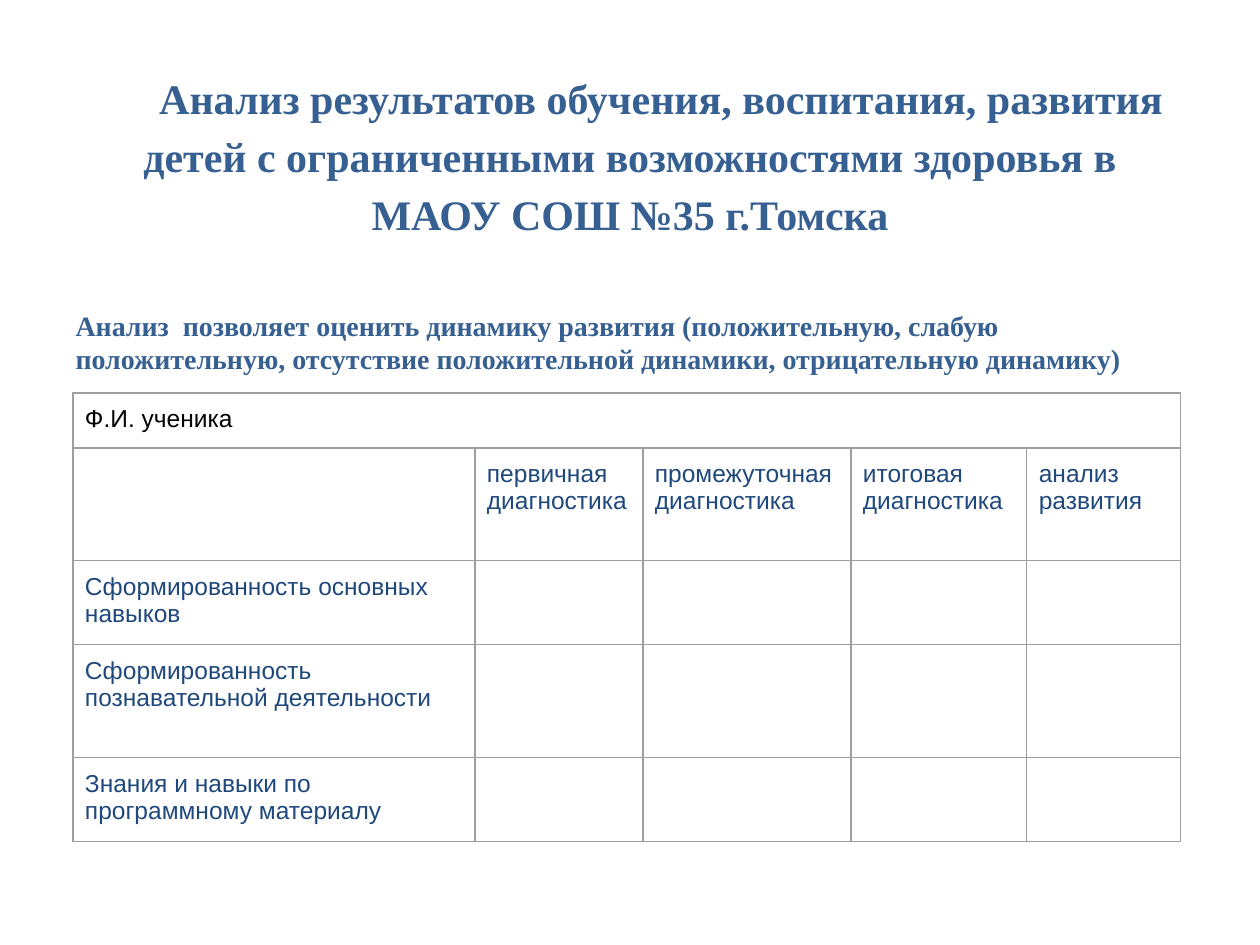
from lxml import etree
from pptx import Presentation
from pptx.dml.color import RGBColor
from pptx.enum.text import MSO_ANCHOR, MSO_AUTO_SIZE, PP_ALIGN
from pptx.oxml.ns import qn
from pptx.util import Pt

PX = 914400 / 126
COLORS = {"heading": "376092", "label": "1F497D", "text": "000000", "border": "9E9E9E"}
CENTER, LEFT = PP_ALIGN.CENTER, PP_ALIGN.LEFT
MIDDLE, TOP = MSO_ANCHOR.MIDDLE, MSO_ANCHOR.TOP
NO_FIT = MSO_AUTO_SIZE.NONE


def px(n):
    return round(n * PX)


def write(tf, text, size=14, font="Arial", color="label", bold=False,
          align=LEFT, indent=0, spacing=None):
    p = tf.paragraphs[0]
    pPr = p._p.get_or_add_pPr()
    pPr.set("marL", "0")
    pPr.set("indent", str(px(indent)))
    etree.SubElement(pPr, qn("a:buNone"))
    p.alignment = align
    p.space_before = Pt(0)
    if spacing:
        p.line_spacing = spacing
    r = p.add_run()
    r.text = text
    r.font.size, r.font.name, r.font.bold = Pt(size), font, bold
    r.font.color.rgb = RGBColor.from_string(COLORS[color])


prs = Presentation()
prs.slide_width, prs.slide_height = px(1260), px(945)
s = prs.slides.add_slide(prs.slide_layouts[1])
title, body = s.placeholders

# Title and introduction
for sp, top, height, anchor in ((title, 125, 131, MIDDLE), (body, 302, 542, TOP)):
    sp.left, sp.top, sp.width, sp.height = px(63), px(top), px(1134), px(height)
    tf = sp.text_frame
    tf.word_wrap, tf.auto_size, tf.vertical_anchor = True, NO_FIT, anchor

# The deeper bottom margin lifts the centred title
title.text_frame.margin_bottom = px(84)
heading = dict(font="Times New Roman", color="heading", bold=True)
write(title.text_frame,
      "Анализ результатов обучения, воспитания, развития детей с ограниченными "
      "возможностями здоровья в МАОУ СОШ №35 г.Томска",
      size=24, align=CENTER, indent=62, spacing=1.15, **heading)
write(body.text_frame,
      "Анализ  позволяет оценить динамику развития (положительную, слабую "
      "положительную, отсутствие положительной динамики, отрицательную динамику)",
      size=16, **heading)

# Diagnostics table
cols = [402, 168, 208, 176, 154]
rows = [55, 113, 84, 113, 84]
labels = [
    ["Ф.И. ученика"],
    ["", "первичная диагностика", "промежуточная диагностика",
     "итоговая диагностика", "анализ развития"],
    ["Сформированность основных навыков"],
    ["Сформированность познавательной деятельности"],
    ["Знания и навыки по программному материалу"],
]
table = s.shapes.add_table(len(rows), len(cols), px(73), px(393),
                           px(sum(cols)), px(sum(rows))).table
table.first_row = table.horz_banding = False
for column, width in zip(table.columns, cols):
    column.width = px(width)
for row, height in zip(table.rows, rows):
    row.height = px(height)
table.cell(0, 0).merge(table.cell(0, len(cols) - 1))

# Cell borders
for cell in table.iter_cells():
    cell.fill.background()
    tcPr = cell._tc.get_or_add_tcPr()
    for i, side in enumerate(("lnL", "lnR", "lnT", "lnB")):
        ln = etree.Element(qn(f"a:{side}"), w=str(Pt(0.75)))
        fill = etree.SubElement(ln, qn("a:solidFill"))
        etree.SubElement(fill, qn("a:srgbClr"), val=COLORS["border"])
        tcPr.insert(i, ln)

# Cell text
for i, texts in enumerate(labels):
    for j, text in enumerate(texts):
        if text:
            cell = table.cell(i, j)
            cell.margin_left = cell.margin_right = px(12)
            cell.margin_top = cell.margin_bottom = px(12)
            write(cell.text_frame, text, color="label" if i else "text")

prs.save("out.pptx")
